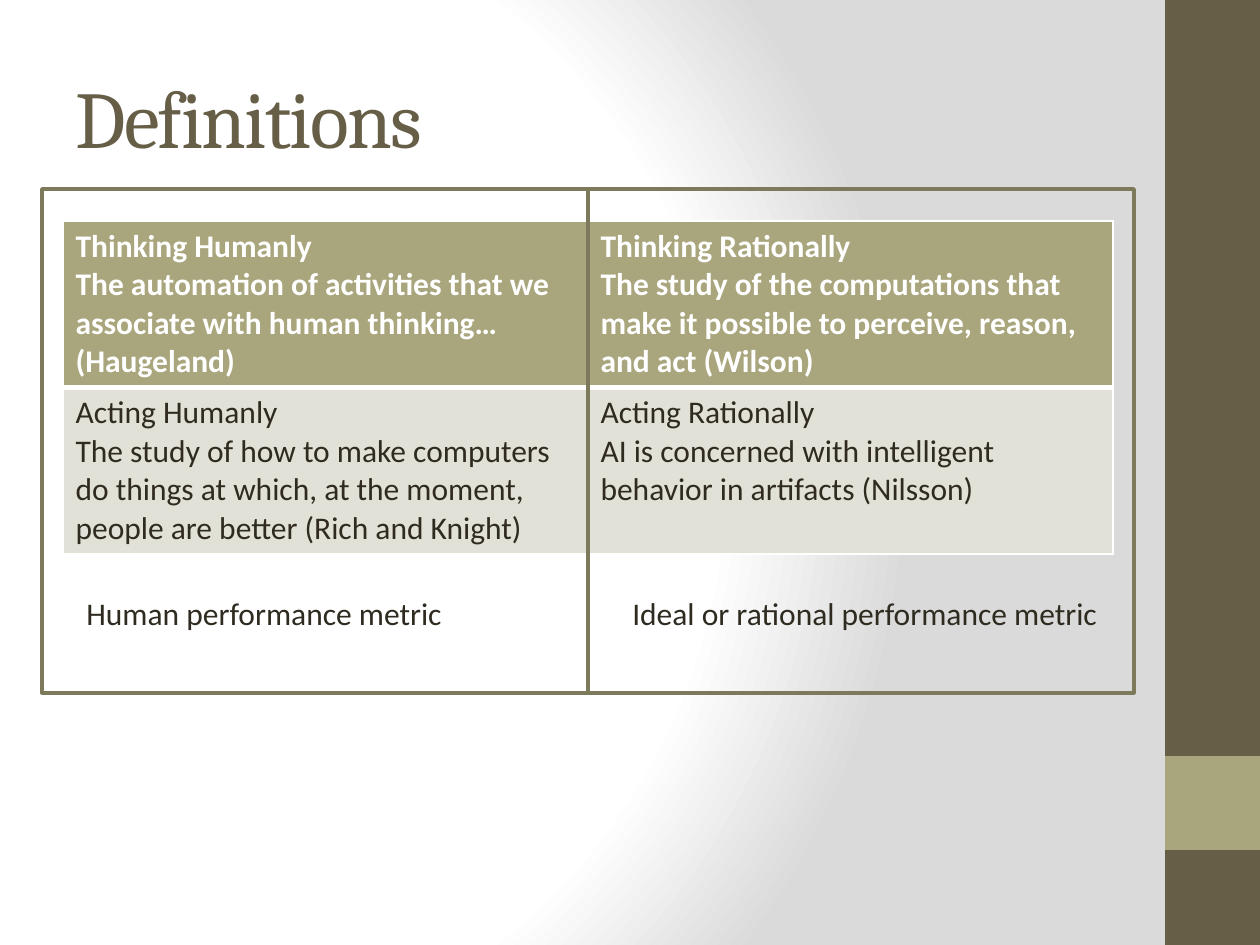
import lxml.etree
import pptx
import pptx.dml.color
import pptx.enum.shapes
import pptx.enum.text
import pptx.oxml
import pptx.oxml.ns
import pptx.util

EMU_PER_PIXEL = 914400 // 126
DRAWING = pptx.oxml.ns.nsdecls("a")
qn = pptx.oxml.ns.qn


def box(*pixels):
    """Turn pixel lengths into EMU."""
    return [pptx.util.Emu(pixel * 914400 // 126) for pixel in pixels]


def color(target, hex_value):
    """Give a fill or a font a solid colour."""
    if hasattr(target, "solid"):
        target.solid()
        target.fore_color.rgb = pptx.dml.color.RGBColor.from_string(hex_value)
    else:
        target.color.rgb = pptx.dml.color.RGBColor.from_string(hex_value)


deck = pptx.Presentation()
deck.slide_width, deck.slide_height = box(1260, 945)
slide = deck.slides.add_slide(deck.slide_layouts[5])

# Background: circular gradient centred towards the left
slide.background.fill.gradient()
gradient = slide.element.find(".//" + qn("a:gradFill"))
for child in list(gradient):
    gradient.remove(child)
stops = "".join(
    f'<a:gs pos="{percent * 1000}"><a:srgbClr val="{shade}"/></a:gs>'
    for percent, shade in [(0, "FFFFFF"), (75, "FFFFFF"), (100, "DADADA")])
gradient.append(pptx.oxml.parse_xml(f"<a:gsLst {DRAWING}>{stops}</a:gsLst>"))
gradient.append(pptx.oxml.parse_xml(
    f'<a:path {DRAWING} path="circle">'
    '<a:fillToRect l="20000" t="50000" r="100000" b="50000"/></a:path>'))

# Side band with its accent square
for top, width, height, shade in [(0, 95, 945, "675E47"), (756, 95, 94, "A9A57C")]:
    band = slide.shapes.add_shape(pptx.enum.shapes.MSO_SHAPE.RECTANGLE,
                                  *box(1165, top, width, height))
    band.shadow.inherit = False
    color(band.fill, shade)
    band.line.fill.background()

# Title
title = slide.shapes.title
title.left, title.top, title.width, title.height = box(63, 38, 1050, 157)
title.text_frame.vertical_anchor = pptx.enum.text.MSO_ANCHOR.MIDDLE
heading = title.text_frame.paragraphs[0]
heading.alignment = pptx.enum.text.PP_ALIGN.LEFT
heading_run = heading.add_run()
heading_run.text = "Definitions"
heading_run.font.name = "Cambria"
heading_run.font.size = pptx.util.Pt(46)
color(heading_run.font, "675E47")
heading_run.font._element.set("spc", "-100")

# Four definitions of AI
definitions = [
    [("Thinking Humanly",
      "The automation of activities that we associate with human thinking… (Haugeland)"),
     ("Thinking Rationally",
      "The study of the computations that make it possible to perceive, reason, "
      "and act (Wilson)")],
    [("Acting Humanly",
      "The study of how to make computers do things at which, at the moment, "
      "people are better (Rich and Knight)"),
     ("Acting Rationally",
      "AI is concerned with intelligent behavior in artifacts (Nilsson)")],
]
row_styles = [("A9A57C", "FFFFFF", True, 1, 3), ("E2E1D7", "2F2B20", False, 3, 1)]
table = slide.shapes.add_table(2, 2, *box(63, 221, 1050, 332)).table
for row, (contents, style) in enumerate(zip(definitions, row_styles)):
    cell_fill, text_color, bold, top_border, bottom_border = style
    for column, lines in enumerate(contents):
        cell = table.cell(row, column)
        color(cell.fill, cell_fill)
        borders = [("lnL", 1), ("lnR", 1), ("lnT", top_border), ("lnB", bottom_border)]
        for position, (side, points) in enumerate(borders):
            cell._tc.get_or_add_tcPr().insert(position, pptx.oxml.parse_xml(
                f'<a:{side} {DRAWING} w="{points * 12700}"><a:solidFill>'
                f'<a:srgbClr val="FFFFFF"/></a:solidFill></a:{side}>'))
        for number, line in enumerate(lines):
            frame = cell.text_frame
            paragraph = frame.add_paragraph() if number else frame.paragraphs[0]
            run = paragraph.add_run()
            run.text = line
            run.font.name = "Calibri"
            run.font.size = pptx.util.Pt(18)
            run.font.bold = bold
            color(run.font, text_color)

# Column frames, each with its metric
metrics = ["Human performance metric", "Ideal or rational performance metric"]
for column, metric in enumerate(metrics):
    left = 42 + column * 546
    frame = slide.shapes.add_shape(pptx.enum.shapes.MSO_SHAPE.RECTANGLE,
                                   *box(left, 189, 546, 504))
    frame.shadow.inherit = False
    frame.fill.background()
    color(frame.line.fill, "7D7A5C")
    frame.line.width = pptx.util.Pt(2)

    caption = slide.shapes.add_textbox(*box(left + 32, 588, 494, 51))
    caption.text_frame.word_wrap = True
    run = caption.text_frame.paragraphs[0].add_run()
    run.text = metric
    run.font.name = "Calibri"
    run.font.size = pptx.util.Pt(18)
    color(run.font, "2F2B20")

deck.save("out.pptx")
